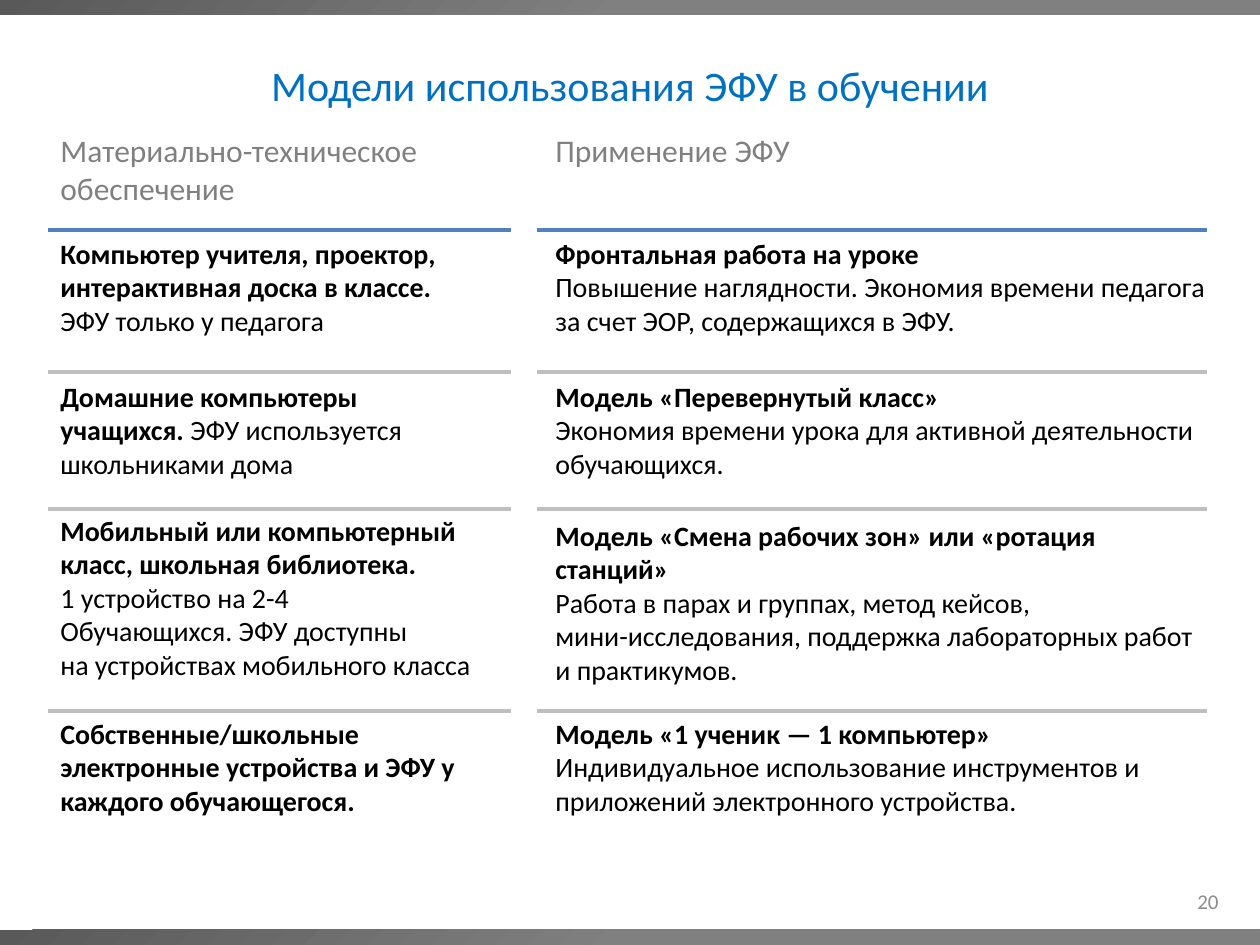
from dataclasses import dataclass
from lxml import etree
from pptx import Presentation
from pptx.dml.color import RGBColor
from pptx.enum.shapes import MSO_CONNECTOR, MSO_SHAPE
from pptx.enum.text import MSO_ANCHOR, MSO_AUTO_SIZE, PP_ALIGN
from pptx.oxml.ns import qn
from pptx.util import Pt

STRAIGHT = MSO_CONNECTOR.STRAIGHT
RECTANGLE = MSO_SHAPE.RECTANGLE
TOP, MIDDLE = MSO_ANCHOR.TOP, MSO_ANCHOR.MIDDLE
LEFT, CENTER, RIGHT = PP_ALIGN.LEFT, PP_ALIGN.CENTER, PP_ALIGN.RIGHT
NO_AUTOFIT = MSO_AUTO_SIZE.NONE


@dataclass(frozen=True)
class Theme:
    font: str = "Calibri"
    title: str = "0070C0"
    heading: str = "808080"
    body: str = "000000"
    number: str = "8C8C8C"
    header_rule: str = "4F81BD"
    row_rule: str = "BFBFBF"
    bar_dark: str = "595959"
    bar_light: str = "808080"
    title_size: int = 24
    heading_size: int = 18
    body_size: int = 16
    number_size: int = 12
    rule_width: int = 2


theme = Theme()
SCALE = 914400 / 126


def px(*lengths):
    return [round(length * SCALE) for length in lengths]


def write_text(text, shape, size, color, align=LEFT, anchor=TOP, wrap=True):
    frame = shape.text_frame
    frame.auto_size = NO_AUTOFIT
    frame.word_wrap = wrap
    frame.vertical_anchor = anchor
    for index, line in enumerate(text.split("\n")):
        paragraph = frame.add_paragraph() if index else frame.paragraphs[0]
        paragraph.alignment = align
        for position, part in enumerate(line.split("**")):
            if part:
                run = paragraph.add_run()
                run.text = part
                run.font.name = theme.font
                run.font.size = Pt(size)
                run.font.bold = position % 2 == 1
                run.font.color.rgb = RGBColor.from_string(color)


presentation = Presentation()
presentation.slide_width, presentation.slide_height = px(1260, 945)
slide = presentation.slides.add_slide(presentation.slide_layouts[5])
shapes = slide.shapes

for top in (0, 930):
    bar = shapes.add_shape(RECTANGLE, *px(0, top, 1260, 15))
    bar.shadow.inherit = False
    bar.line.fill.background()
    bar.fill.gradient()
    bar.fill.gradient_angle = 315
    start, end = bar.fill.gradient_stops
    start.color.rgb = RGBColor.from_string(theme.bar_dark)
    end.color.rgb = RGBColor.from_string(theme.bar_light)
    start.position, end.position = 0, 0.5

title = shapes.title
title.left, title.top, title.width, title.height = px(63, 6, 1134, 158)
write_text("Модели использования ЭФУ в обучении", title, theme.title_size,
           theme.title, align=CENTER, anchor=MIDDLE)

number = shapes.add_textbox(*px(937, 876, 294, 50))
write_text("20", number, theme.number_size, theme.number, align=RIGHT, anchor=MIDDLE)

column_lefts = (48, 543)
headings = (
    ("Материально-техническое\nобеспечение", 396, 89),
    ("Применение ЭФУ", 585, 50),
)
for left, (text, width, height) in zip(column_lefts, headings):
    box = shapes.add_textbox(*px(left, 125, width, height))
    write_text(text, box, theme.heading_size, theme.heading)

rule_spans = ((48, 511), (537, 1207))
for top in (230, 372, 509, 711):
    color = theme.header_rule if top == 230 else theme.row_rule
    for left, right in rule_spans:
        rule = shapes.add_connector(STRAIGHT, *px(left, top, right, top))
        rule.line.color.rgb = RGBColor.from_string(color)
        rule.line.width = Pt(theme.rule_width)
        etree.SubElement(rule._element.spPr, qn("a:effectLst"))

rows = (
    (
        (230, 406, 115, False, "**Компьютер учителя, проектор,**\n"
         "**интерактивная доска в классе.**\n"
         "ЭФУ только у педагога"),
        (230, 699, 115, True, "**Фронтальная работа на уроке**\n"
         "Повышение наглядности. Экономия времени педагога "
         "за счет ЭОР, содержащихся в ЭФУ."),
    ),
    (
        (373, 372, 115, False, "**Домашние компьютеры**\n"
         "**учащихся. **ЭФУ используется\n"
         "школьниками дома"),
        (373, 664, 115, True, "**Модель «Перевернутый класс»**\n"
         "Экономия времени урока для активной деятельности обучающихся."),
    ),
    (
        (507, 441, 183, False, "**Мобильный или компьютерный**\n"
         "**класс, школьная библиотека.**\n"
         "1 устройство на 2-4\n"
         "Обучающихся. ЭФУ доступны\n"
         "на устройствах мобильного класса"),
        (512, 677, 183, True, "**Модель «Смена рабочих зон» или «ротация станций»**\n"
         "Работа в парах и группах, метод кейсов,\n"
         "мини-исследования, поддержка лабораторных работ и практикумов."),
    ),
    (
        (710, 489, 115, True, "**Собственные/школьные электронные устройства "
         "и ЭФУ у каждого обучающегося.**"),
        (710, 699, 115, True, "**Модель «1 ученик — 1 компьютер»**\n"
         "Индивидуальное использование инструментов "
         "и приложений электронного устройства."),
    ),
)
for row in rows:
    for left, (top, width, height, wrap, text) in zip(column_lefts, row):
        box = shapes.add_textbox(*px(left, top, width, height))
        write_text(text, box, theme.body_size, theme.body, wrap=wrap)

presentation.save("out.pptx")
